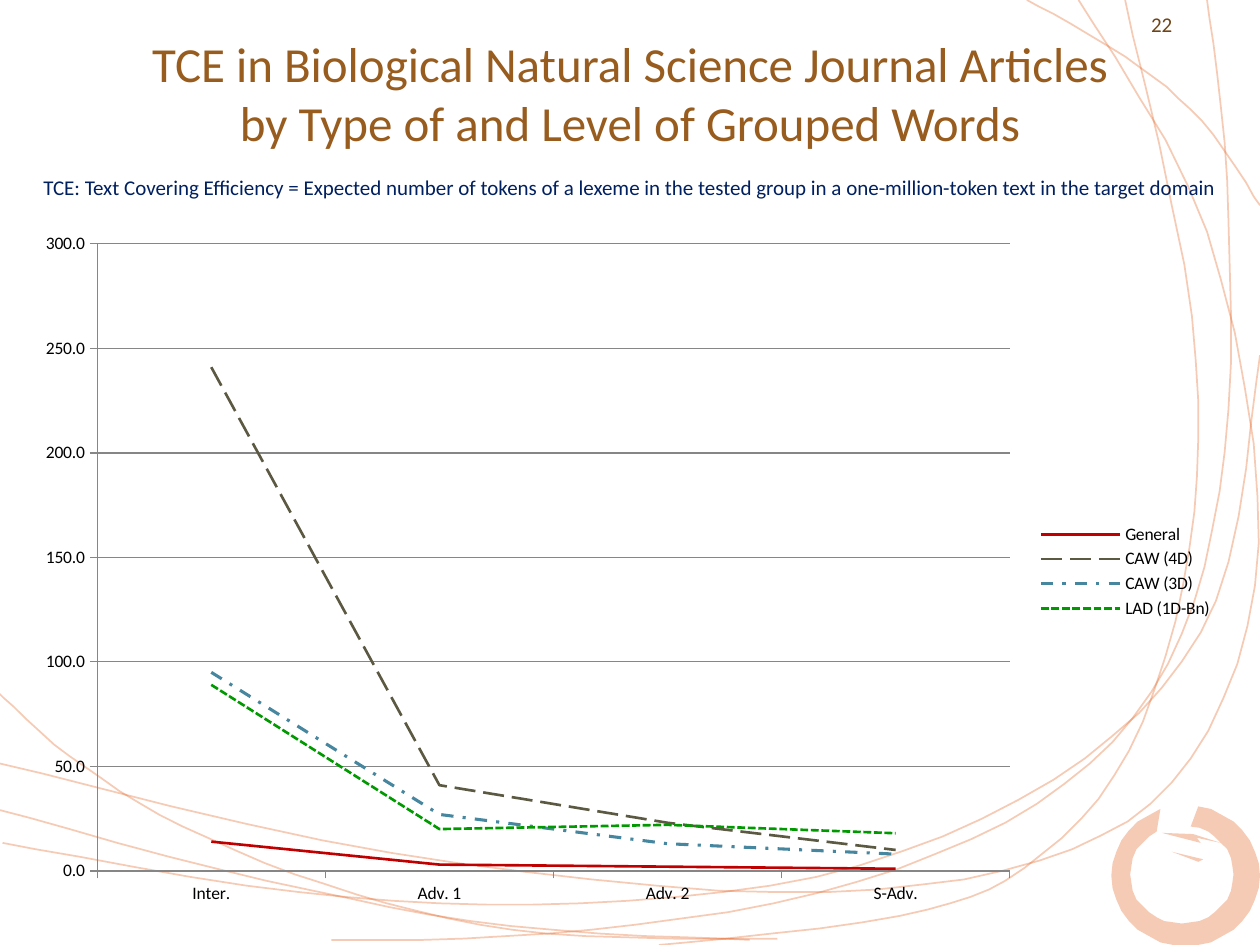
from dataclasses import dataclass
from math import cos, radians, sin
from typing import NamedTuple

from lxml.etree import SubElement
from pptx import Presentation
from pptx.chart.chart import Chart
from pptx.chart.data import CategoryChartData
from pptx.dml.color import RGBColor
from pptx.enum.chart import XL_CHART_TYPE, XL_LEGEND_POSITION, XL_TICK_MARK
from pptx.enum.dml import MSO_LINE
from pptx.enum.text import MSO_ANCHOR, MSO_AUTO_SIZE, PP_ALIGN
from pptx.oxml.ns import qn
from pptx.slide import Slide
from pptx.text.text import _Paragraph as Paragraph
from pptx.util import Inches, Pt

Point = tuple[float, float]


@dataclass(frozen=True)
class Theme:
    font: str = "Calibri"
    title: str = "975C1E"
    note: str = "002060"
    number: str = "704416"
    swirl: str = "E3560E"
    chart_text: str = "000000"
    axis: str = "868686"
    title_size: int = 28
    small_size: int = 12
    chart_size: int = 10


class Series(NamedTuple):
    name: str
    values: tuple[float, ...]
    color: str
    width: float
    dash: MSO_LINE


THEME = Theme()

SWIRLS = (
    ((-0.03, 5.48), (0.55, 6), (1.45, 6.56), (2.83, 7.1), (4.34, 7.41), (6.17, 7.45)),
    ((5.23, 7.5), (7.14, 7.27), (8.13, 6.89), (8.96, 5.96), (9.44, 4.35), (9.46, 2.51), (8.93, 0)),
    ((0, 6.06), (3.11, 6.77), (6.16, 7.08), (8.25, 6.83), (9.45, 6.02), (9.99, 4.31), (9.58, 1.84), (8.56, 0)),
    ((0.02, 6.69), (2.37, 7.08), (4.6, 7.17), (6.82, 6.87), (8.61, 6.02), (9.65, 4.77), (10, 2.82)),
    ((2.63, 7.46), (4.35, 7.41), (6.48, 7.09), (8.23, 6.38), (9.27, 5.27), (9.72, 3.59), (9.74, 1.43), (9.58, 0)),
    ((8.15, 0), (8.93, 0.45), (9.54, 0.96), (10, 1.63)),
    ((0, 6.43), (2.11, 6.99), (4.05, 7.35), (5.95, 7.46)),
)
BRUSH_MARKS = (
    ((9.22, 6.61), (9.47, 6.62), (9.69, 6.69), (9.5, 6.65), (9.53, 6.69)),
    ((9.3, 6.76), (9.55, 6.82), (9.51, 6.84)),
)

CATEGORIES = ("Inter.", "Adv. 1", "Adv. 2", "S-Adv.")
SERIES = (
    Series("General", (14, 3, 2, 1), "C00000", 1.5, MSO_LINE.SOLID),
    Series("CAW (4D)", (241, 41, 23, 10), "5C5943", 1.5, MSO_LINE.LONG_DASH),
    Series("CAW (3D)", (95, 27, 13, 8), "47869F", 1.75, MSO_LINE.DASH_DOT),
    Series("LAD (1D-Bn)", (89, 20, 22, 18), "009900", 1.5, MSO_LINE.SQUARE_DOT),
)


def smooth_curve(knots: tuple[Point, ...], steps: int = 6) -> list[Point]:
    padded = (knots[0], *knots, knots[-1])
    curve = []
    for before, start, end, after in zip(padded, padded[1:], padded[2:], padded[3:]):
        for step in range(steps):
            t = step / steps
            curve.append(tuple(
                b + t * (c - a) / 2 + t**2 * (a - 2.5 * b + 2 * c - d / 2) + t**3 * (3 * (b - c) + d - a) / 2
                for a, b, c, d in zip(before, start, end, after)))
    return [*curve, knots[-1]]


def arc(center: Point, radius: Point, angles: range) -> list[Point]:
    return [(center[0] + radius[0] * cos(radians(angle)), center[1] + radius[1] * sin(radians(angle)))
            for angle in angles]


def draw_outline(slide: Slide, outline: list[Point], filled: bool = False) -> None:
    points = [(round(x * 100), round(y * 100)) for x, y in outline]
    builder = slide.shapes.build_freeform(*points[0], scale=Inches(0.01))
    builder.add_line_segments(points[1:], close=filled)
    shape = builder.convert_to_shape()
    shape.shadow.inherit = False
    color = RGBColor.from_string(THEME.swirl)
    if filled:
        shape.fill.solid()
        shape.fill.fore_color.rgb = color
        shape.line.fill.background()
    else:
        shape.fill.background()
        shape.line.color.rgb = color
        shape.line.width = Pt(1)
    for color_element in shape.element.iter(qn("a:srgbClr")):
        SubElement(color_element, qn("a:alpha"), val="30000")


def draw_background(slide: Slide) -> None:
    for swirl in SWIRLS:
        draw_outline(slide, smooth_curve(swirl))
    outer = arc((9.41, 6.95), (0.59, 0.56), range(-80, 251, 10))
    inner = arc((9.38, 6.94), (0.41, 0.39), range(240, -81, -10))
    for outline in (outer + inner, *BRUSH_MARKS):
        draw_outline(slide, outline, filled=True)


def format_paragraph(paragraph: Paragraph, size: int, color: str) -> None:
    paragraph.alignment = PP_ALIGN.CENTER
    for run in paragraph.runs:
        run.font.name = THEME.font
        run.font.size = Pt(size)
        run.font.color.rgb = RGBColor.from_string(color)
    for line_break in paragraph._p.iter(qn("a:br")):
        SubElement(line_break, qn("a:rPr"), sz=str(size * 100))


def add_title(slide: Slide) -> None:
    title = slide.shapes.title
    title.left, title.top, title.width, title.height = Inches(0), Inches(0.13), Inches(10), Inches(1.59)
    frame = title.text_frame
    frame.text = ("TCE in Biological Natural Science Journal Articles\vby Type of and Level of Grouped Words\n"
                  "TCE: Text Covering Efficiency = Expected number of tokens of a lexeme in the tested group "
                  "in a one-million-token text in the target domain")
    frame.auto_size = MSO_AUTO_SIZE.NONE
    frame.vertical_anchor = MSO_ANCHOR.MIDDLE
    heading, note = frame.paragraphs
    format_paragraph(heading, THEME.title_size, THEME.title)
    format_paragraph(note, THEME.small_size, THEME.note)
    note.space_before = Pt(13)
    title.element.getparent().append(title.element)


def set_plot_area(chart: Chart, **fractions: float) -> None:
    plot_area = chart.element.find(".//" + qn("c:plotArea"))
    for old_layout in plot_area.findall(qn("c:layout")):
        plot_area.remove(old_layout)
    layout = SubElement(plot_area, qn("c:layout"))
    plot_area.insert(0, layout)
    manual = SubElement(layout, qn("c:manualLayout"))
    settings = {"layoutTarget": "inner", "xMode": "edge", "yMode": "edge", **fractions}
    for name, value in settings.items():
        SubElement(manual, qn(f"c:{name}"), val=str(value))


def add_efficiency_chart(slide: Slide) -> None:
    data = CategoryChartData(number_format="0.0")
    data.categories = CATEGORIES
    for series in SERIES:
        data.add_series(series.name, series.values)
    chart = slide.shapes.add_chart(
        XL_CHART_TYPE.LINE, Inches(0.2), Inches(1.77), Inches(9.53), Inches(5.53), data).chart
    chart.has_title = False
    chart.font.name = THEME.font
    chart.font.size = Pt(THEME.chart_size)
    chart.font.color.rgb = RGBColor.from_string(THEME.chart_text)
    chart.has_legend = True
    chart.legend.position = XL_LEGEND_POSITION.RIGHT
    chart.legend.include_in_layout = False
    value_axis = chart.value_axis
    value_axis.minimum_scale, value_axis.maximum_scale, value_axis.major_unit = 0, 300, 50
    value_axis.tick_labels.number_format = "0.0"
    value_axis.tick_labels.number_format_is_linked = False
    value_axis.has_major_gridlines = True
    for axis in (chart.category_axis, value_axis):
        axis.major_tick_mark = XL_TICK_MARK.OUTSIDE
    for line in (chart.category_axis.format.line, value_axis.format.line, value_axis.major_gridlines.format.line):
        line.color.rgb = RGBColor.from_string(THEME.axis)
        line.width = Pt(0.75)
    chart.plots[0].vary_by_categories = False
    for plotted, series in zip(chart.plots[0].series, SERIES):
        plotted.smooth = False
        plotted.format.line.color.rgb = RGBColor.from_string(series.color)
        plotted.format.line.width = Pt(series.width)
        plotted.format.line.dash_style = series.dash
    set_plot_area(chart, x=0.06, y=0.03, w=0.76, h=0.9)


def add_slide_number(slide: Slide) -> None:
    frame = slide.shapes.add_textbox(Inches(8.44), Inches(0), Inches(1.56), Inches(0.39)).text_frame
    frame.word_wrap = True
    frame.vertical_anchor = MSO_ANCHOR.MIDDLE
    frame.text = "22"
    format_paragraph(frame.paragraphs[0], THEME.small_size, THEME.number)


def main() -> None:
    presentation = Presentation()
    presentation.slide_width, presentation.slide_height = Inches(10), Inches(7.5)
    slide = presentation.slides.add_slide(presentation.slide_layouts[5])
    draw_background(slide)
    add_title(slide)
    add_efficiency_chart(slide)
    add_slide_number(slide)
    presentation.save("out.pptx")


if __name__ == "__main__":
    main()
